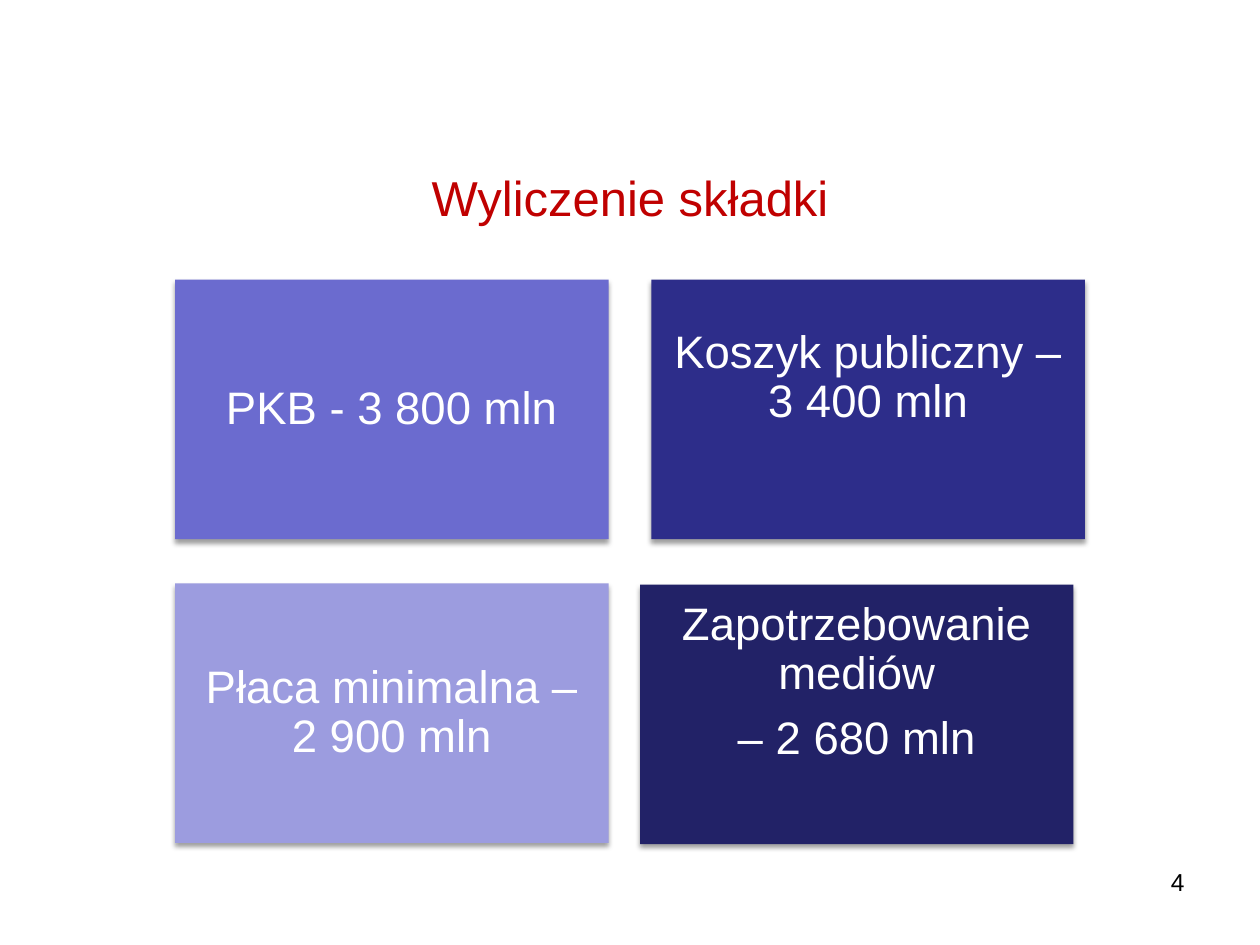
from lxml import etree
from pptx import Presentation
from pptx.dml.color import RGBColor
from pptx.enum.shapes import MSO_SHAPE
from pptx.enum.text import MSO_ANCHOR, PP_ALIGN
from pptx.oxml.ns import qn
from pptx.util import Inches, Pt

RECT = MSO_SHAPE.RECTANGLE
MIDDLE = MSO_ANCHOR.MIDDLE
CENTER, RIGHT = PP_ALIGN.CENTER, PP_ALIGN.RIGHT
RED = RGBColor(0xC0, 0x00, 0x00)
BLACK = RGBColor(0x00, 0x00, 0x00)
WHITE = RGBColor(0xFF, 0xFF, 0xFF)
BLUE = RGBColor(0x6B, 0x6B, 0xCF)
NAVY = RGBColor(0x2D, 0x2D, 0x8A)
LILAC = RGBColor(0x9C, 0x9C, 0xDF)
MIDNIGHT = RGBColor(0x22, 0x22, 0x67)


def add_text(p, text, size, color, align):
    p.alignment = align
    r = p.add_run()
    r.text = text
    for name, value in {"name": "Arial", "size": Pt(size)}.items():
        setattr(r.font, name, value)
    r.font.color.rgb = color


def add_shadow(sp):
    sp.shadow.inherit = False
    effects = sp._element.spPr.find(qn("a:effectLst"))
    shadow = etree.SubElement(effects, qn("a:outerShdw"), blurRad=str(Pt(3.1)),
                              dist=str(Pt(2)), dir="5400000", rotWithShape="0")
    color = etree.SubElement(shadow, qn("a:srgbClr"), val="000000")
    etree.SubElement(color, qn("a:alpha"), val="38000")


prs = Presentation()
prs.slide_width, prs.slide_height = Inches(10), Inches(7.5)
s = prs.slides.add_slide(prs.slide_layouts[5])

title = s.shapes.title
title.left, title.top = Inches(0.5), Inches(0.99)
title.width, title.height = Inches(9), Inches(1.15)
title.text_frame.vertical_anchor = MIDDLE
add_text(title.text_frame.paragraphs[0], "Wyliczenie składki", 28, RED, CENTER)

tiles = [
    (1.39, 2.22, BLUE, 0.11, ["PKB - 3 800 mln"]),
    (5.17, 2.22, NAVY, 0.61, ["Koszyk publiczny – 3 400 mln"]),
    (1.39, 4.63, LILAC, 0.11, ["Płaca minimalna – 2 900 mln"]),
    (5.08, 4.64, MIDNIGHT, 0.61, ["Zapotrzebowanie mediów", "– 2 680 mln"]),
]
for left, top, fill, bottom_inset, lines in tiles:
    sp = s.shapes.add_shape(RECT, Inches(left), Inches(top), Inches(3.44), Inches(2.06))
    sp.fill.solid()
    sp.fill.fore_color.rgb = fill
    sp.line.fill.background()
    add_shadow(sp)
    tf = sp.text_frame
    tf.word_wrap = True
    tf.vertical_anchor = MIDDLE
    tf.margin_left = tf.margin_right = tf.margin_top = Inches(0.11)
    tf.margin_bottom = Inches(bottom_inset)
    for i, line in enumerate(lines):
        p = tf.add_paragraph() if i else tf.paragraphs[0]
        p.line_spacing = 0.9
        p.space_after = Pt(9.1)
        add_text(p, line, 26, WHITE, CENTER)

number = s.shapes.add_textbox(Inches(7.17), Inches(6.83), Inches(2.33), Inches(0.52))
number.text_frame.word_wrap = True
add_text(number.text_frame.paragraphs[0], "4", 14, BLACK, RIGHT)

prs.save("out.pptx")
